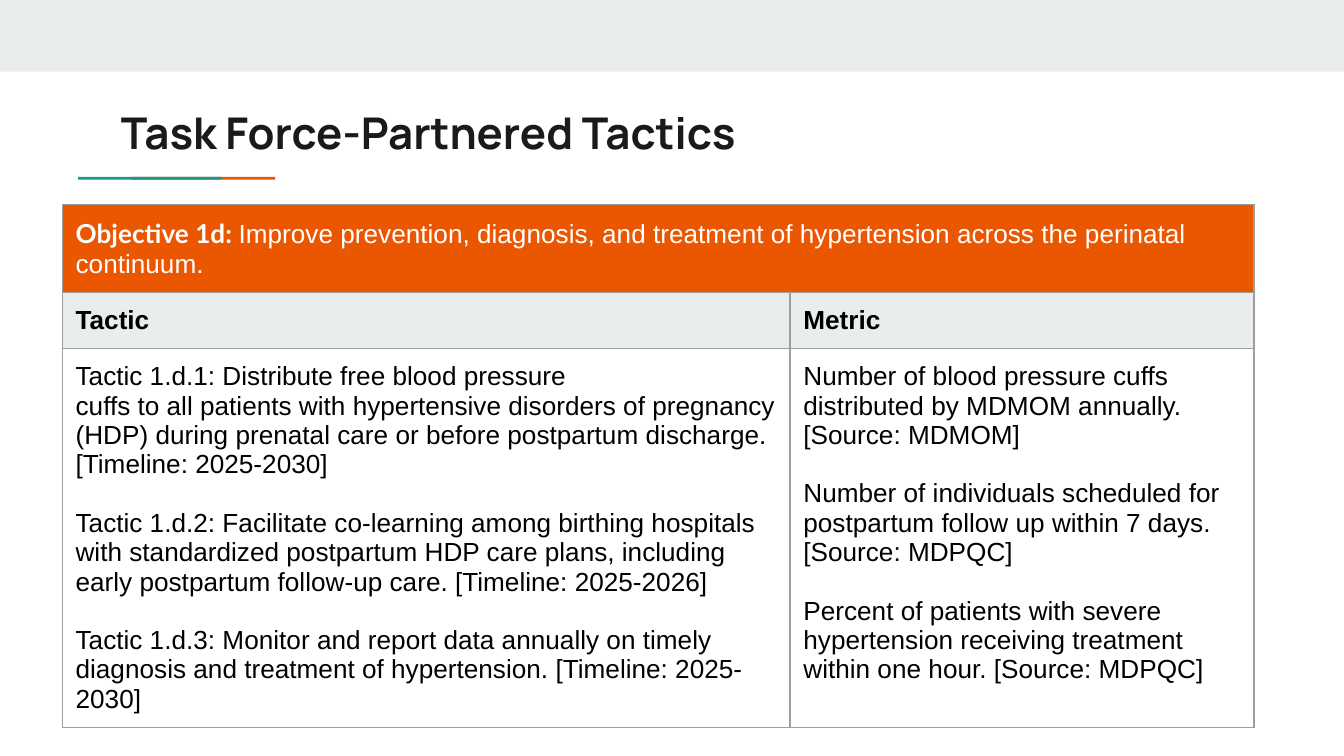
from lxml.etree import SubElement
from pptx import Presentation
from pptx.dml.color import RGBColor
from pptx.enum.shapes import MSO_SHAPE
from pptx.enum.text import MSO_ANCHOR, PP_ALIGN
from pptx.oxml.ns import qn
from pptx.util import Pt

COLORS = {
    "band": "E9EDEE",
    "orange": "EB5600",
    "green": "1A9988",
    "title": "1A1A1A",
    "white": "FFFFFF",
    "black": "000000",
    "border": "9E9E9E",
}
MARGINS = {f"margin_{side}": Pt(7.2) for side in ("left", "top", "right", "bottom")}
TITLE_FONT = {"name": "Manrope", "size": Pt(23.4), "bold": True}
BODY_FONT = {"name": "Arial", "size": Pt(14), "bold": False}
HEADING_FONT = {**BODY_FONT, "bold": True}
LABEL_FONT = {**HEADING_FONT, "name": "Lato"}

# Each entry is a group of paragraphs; a gap separates the groups.
TACTICS = [
    ["Tactic 1.d.1: Distribute free blood pressure",
     "cuffs to all patients with hypertensive disorders of pregnancy (HDP) during "
     "prenatal care or before postpartum discharge. [Timeline: 2025-2030]"],
    ["Tactic 1.d.2: Facilitate co-learning among birthing hospitals with standardized "
     "postpartum HDP care plans, including early postpartum follow-up care. "
     "[Timeline: 2025-2026]"],
    ["Tactic 1.d.3: Monitor and report data annually on timely diagnosis and treatment "
     "of hypertension. [Timeline: 2025-2030]"],
]
METRICS = [
    ["Number of blood pressure cuffs",
     "distributed by MDMOM annually.",
     "[Source: MDMOM]"],
    ["Number of individuals scheduled for",
     "postpartum follow up within 7 days.",
     "[Source: MDPQC]"],
    ["Percent of patients with severe hypertension receiving treatment within one hour. "
     "[Source: MDPQC]"],
]


def color(name):
    return RGBColor.from_string(COLORS[name])


def apply_format(target, values):
    for attribute, value in values.items():
        setattr(target, attribute, value)


def add_run(paragraph, text, font_format, color_name):
    run = paragraph.add_run()
    run.text = text
    apply_format(run.font, font_format)
    run.font.color.rgb = color(color_name)


def add_bar(slide, box, color_name):
    bar = slide.shapes.add_shape(MSO_SHAPE.RECTANGLE, *map(Pt, box))
    bar.shadow.inherit = False
    bar.fill.solid()
    bar.fill.fore_color.rgb = color(color_name)
    bar.line.fill.background()


def add_accent(slide, box):
    """Draw the rule below the title: a green bar overlapping an orange one."""
    left, top, width, height = box
    offset = 28.8
    add_bar(slide, (left + offset, top, width - offset, height), "orange")
    add_bar(slide, (left, top, width - offset, height), "green")


def place_title(slide, box, text):
    title = slide.shapes.title
    apply_format(title, dict(zip(("left", "top", "width", "height"), map(Pt, box))))
    frame = title.text_frame
    apply_format(frame, {**MARGINS, "word_wrap": True,
                         "vertical_anchor": MSO_ANCHOR.MIDDLE})
    paragraph = frame.paragraphs[0]
    paragraph.alignment = PP_ALIGN.LEFT
    add_run(paragraph, text, TITLE_FONT, "title")


def format_cell(cell, fill_name):
    apply_format(cell, {**MARGINS, "vertical_anchor": MSO_ANCHOR.TOP})
    properties = cell._tc.get_or_add_tcPr()
    for edge in ("a:lnL", "a:lnR", "a:lnT", "a:lnB"):
        line = SubElement(properties, qn(edge), w=str(Pt(0.75)))
        fill = SubElement(line, qn("a:solidFill"))
        SubElement(fill, qn("a:srgbClr"), val=COLORS["border"])
    cell.fill.solid()
    cell.fill.fore_color.rgb = color(fill_name)


def fill_groups(cell, groups):
    frame = cell.text_frame
    for group_index, group in enumerate(groups):
        for line_index, text in enumerate(group):
            is_first = group_index == line_index == 0
            paragraph = frame.paragraphs[0] if is_first else frame.add_paragraph()
            if group_index and line_index == 0:
                paragraph.space_before = Pt(15.6)
            add_run(paragraph, text, BODY_FONT, "black")


def add_tactics_table(slide, box):
    left, top, width, height = box
    table = slide.shapes.add_table(3, 2, *map(Pt, box)).table
    apply_format(table, {"first_row": False, "horz_banding": False})
    tactic_width = 389.9
    for column, column_width in zip(table.columns, (tactic_width, width - tactic_width)):
        column.width = Pt(column_width)
    objective_height, heading_height = 46.6, 30.2
    row_heights = (objective_height, heading_height,
                   height - objective_height - heading_height)
    for row, row_height, fill_name in zip(table.rows, row_heights,
                                          ("orange", "band", "white")):
        row.height = Pt(row_height)
        for cell in row.cells:
            format_cell(cell, fill_name)

    table.cell(0, 0).merge(table.cell(0, 1))
    objective = table.cell(0, 0).text_frame.paragraphs[0]
    add_run(objective, "Objective 1d: ", LABEL_FONT, "white")
    add_run(objective, "Improve prevention, diagnosis, and treatment of hypertension "
            "across the perinatal continuum.", BODY_FONT, "white")
    for index, (heading, groups) in enumerate((("Tactic", TACTICS), ("Metric", METRICS))):
        paragraph = table.cell(1, index).text_frame.paragraphs[0]
        add_run(paragraph, heading, HEADING_FONT, "black")
        fill_groups(table.cell(2, index), groups)


def main():
    presentation = Presentation()
    presentation.slide_width, presentation.slide_height = Pt(720), Pt(405)
    slide = presentation.slides.add_slide(presentation.slide_layouts[5])
    add_bar(slide, (0, 0, 720, 38.4), "band")
    add_accent(slide, (41.8, 94.8, 105.6, 1.5))
    place_title(slide, (57.6, 49.7, 605.5, 42.5), "Task Force-Partnered Tactics")
    add_tactics_table(slide, (33.3, 109.6, 638.5, 279.8))
    presentation.save("out.pptx")


if __name__ == "__main__":
    main()
